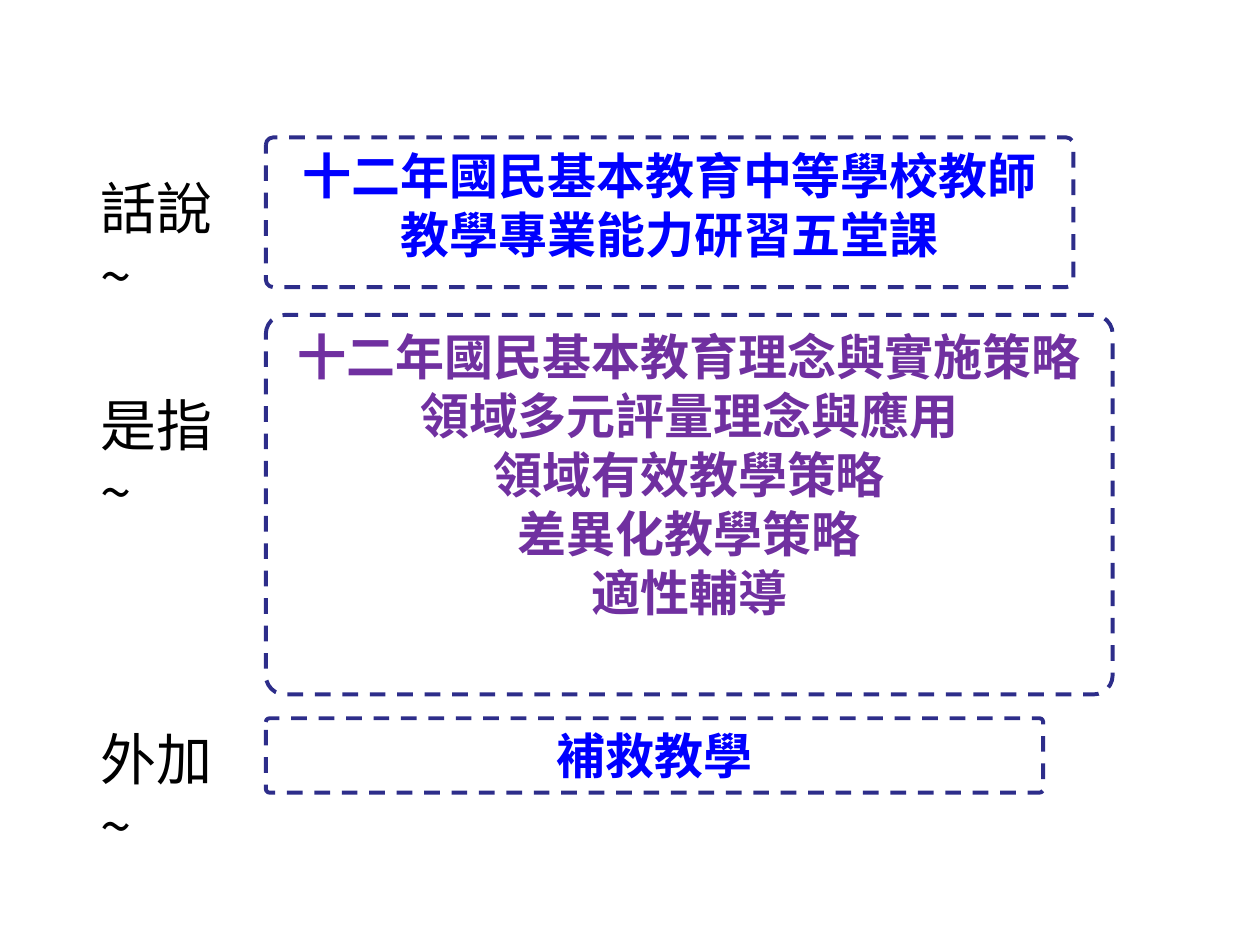
from lxml import etree
from pptx import Presentation
from pptx import util as u
from pptx.dml.color import RGBColor
from pptx.enum import dml, shapes, text
from pptx.oxml.ns import qn

NOTO = "Noto Sans CJK SC"
LABEL = {"name": NOTO, "size": u.Pt(32), "bold": False}
COURSE = {"name": "Arial", "size": u.Pt(28), "bold": True}
TOPIC = {**COURSE, "name": NOTO}

# label, label top, box top, width, height (cm), font, colour, lines
ROWS = [
    ("話說~", 3.38, 2.77, 16.28, 3.02, COURSE, "0000FF",
     ["十二年國民基本教育中等學校教師", "教學專業能力研習五堂課"]),
    ("是指~", 7.75, 6.35, 17.07, 7.65, TOPIC, "7030A0",
     ["十二年國民基本教育理念與實施策略", "領域多元評量理念與應用",
      "領域有效教學策略", "差異化教學策略", "適性輔導"]),
    ("外加~", 14.48, 14.48, 15.67, 1.5, COURSE, "0000FF", ["補救教學"]),
]


def paint(fmt, tint):
    """Give a fill or a font a solid colour."""
    if hasattr(fmt, "solid"):
        fmt.solid()
        fmt.fore_color.rgb = RGBColor.from_string(tint)
    else:
        fmt.color.rgb = RGBColor.from_string(tint)


def write(frame, lines, style, tint, align):
    """Fill a text frame, one paragraph a line."""
    frame.word_wrap = True
    frame.vertical_anchor = text.MSO_ANCHOR.TOP
    for i, line in enumerate(lines):
        para = frame.paragraphs[0] if i == 0 else frame.add_paragraph()
        para.alignment = align
        run = para.add_run()
        run.text = line
        for key, val in style.items():
            setattr(run.font, key, val)
        paint(run.font, tint)
        # East Asian typeface
        etree.SubElement(run.font._element, qn("a:ea"), typeface=NOTO)


def add_label(slide, words, top):
    box = slide.shapes.add_textbox(u.Cm(1.78), u.Cm(top), u.Cm(3.63), u.Cm(1.63))
    # A wide right margin drops the tilde to a second line
    box.text_frame.margin_right = u.Cm(0.9)
    write(box.text_frame, [words], LABEL, "000000", text.PP_ALIGN.LEFT)


def add_panel(slide, top, wide, high, lines, style, tint):
    box = slide.shapes.add_shape(shapes.MSO_SHAPE.ROUNDED_RECTANGLE,
                                 u.Cm(5.36), u.Cm(top), u.Cm(wide), u.Cm(high))
    box.adjustments[0] = 0.05
    box.shadow.inherit = False
    # Translucent white fill
    paint(box.fill, "FFFFFF")
    white = box.fill._xPr.find(qn("a:solidFill"))[0]
    etree.SubElement(white, qn("a:alpha"), val="70000")
    # Dashed outline
    paint(box.line.fill, "2D2D8A")
    box.line.width = u.Pt(2.25)
    box.line.dash_style = dml.MSO_LINE.DASH
    write(box.text_frame, lines, style, tint, text.PP_ALIGN.CENTER)


def main():
    deck = Presentation()
    deck.slide_width, deck.slide_height = u.Cm(25.4), u.Cm(19.05)
    slide = deck.slides.add_slide(deck.slide_layouts[6])
    for words, at, top, wide, high, style, tint, lines in ROWS:
        add_label(slide, words, at)
        add_panel(slide, top, wide, high, lines, style, tint)
    deck.save("out.pptx")


if __name__ == "__main__":
    main()
